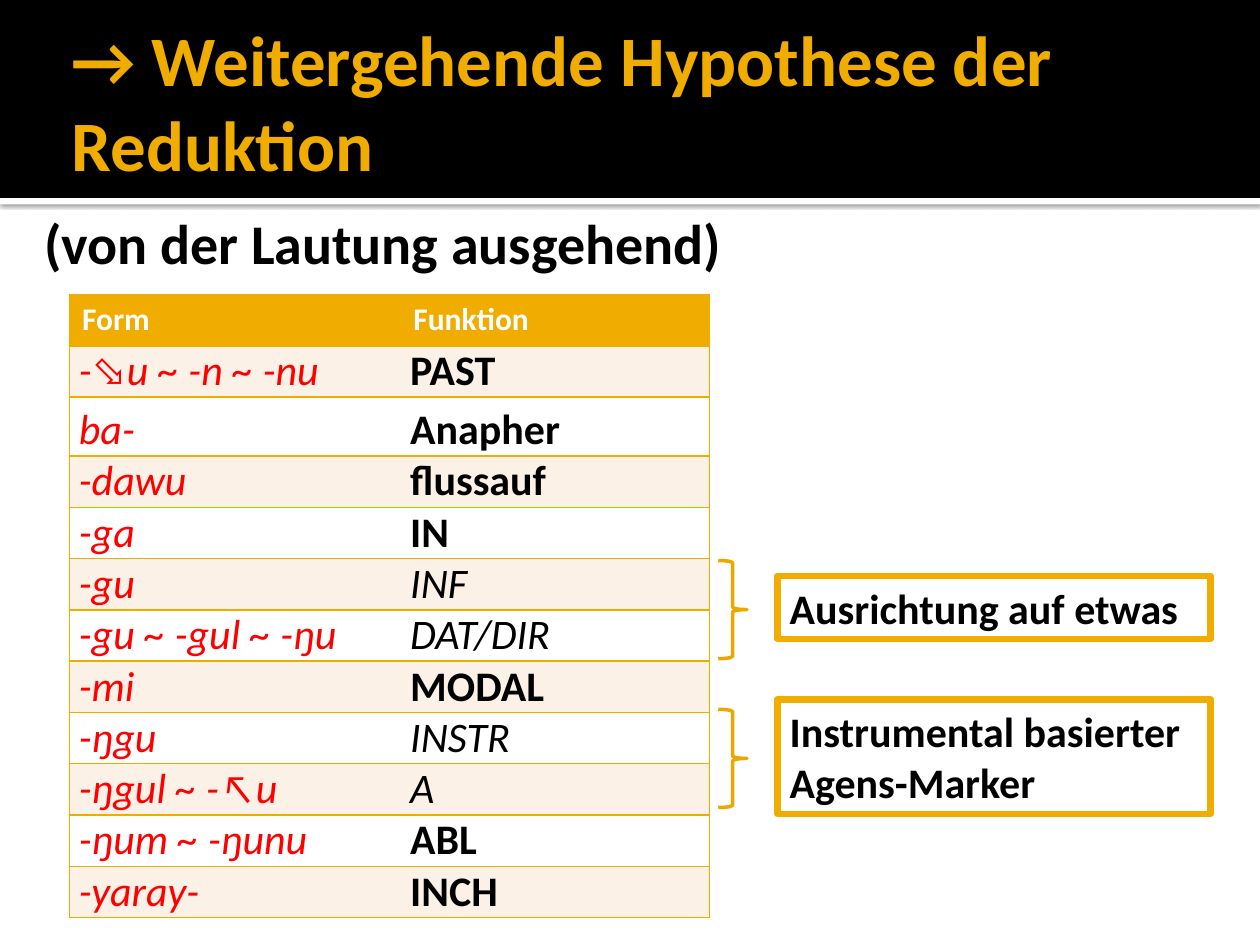
"""Build a slide on reducing suffix forms to shared functions, as a table with bracketed remarks."""
from lxml import etree
from pptx import Presentation
from pptx.dml.color import RGBColor
from pptx.enum.shapes import MSO_SHAPE
from pptx.enum.text import MSO_ANCHOR, MSO_AUTO_SIZE, PP_ALIGN
from pptx.oxml import parse_xml
from pptx.oxml.ns import qn
from pptx.util import Cm, Pt

RECTANGLE, BRACE = MSO_SHAPE.RECTANGLE, MSO_SHAPE.RIGHT_BRACE
MIDDLE, TOP = MSO_ANCHOR.MIDDLE, MSO_ANCHOR.TOP
LEFT, JUSTIFY = PP_ALIGN.LEFT, PP_ALIGN.JUSTIFY
NO_FIT, GROW = MSO_AUTO_SIZE.NONE, MSO_AUTO_SIZE.SHAPE_TO_FIT_TEXT

GOLD = RGBColor(0xF0, 0xAD, 0x00)
BRACE_GOLD = RGBColor(0xEB, 0xA9, 0x00)
BLACK = RGBColor(0, 0, 0)
WHITE = RGBColor(0xFF, 0xFF, 0xFF)
CREAM = RGBColor(0xFC, 0xF1, 0xE7)
RED = RGBColor(0xFF, 0, 0)
FONT = "Calibri"

TITLE = "→ Weitergehende Hypothese der Reduktion"
SUBTITLE = "(von der Lautung ausgehend)"
HEADER = ("Form", "Funktion")
FORMS = [
    ("-⬂u ~ -n ~ -nu", "PAST"),
    ("ba-", "Anapher"),
    ("-dawu", "flussauf"),
    ("-ga", "IN"),
    ("-gu", "INF"),
    ("-gu ~ -gul ~ -ŋu", "DAT/DIR"),
    ("-mi", "MODAL"),
    ("-ŋgu", "INSTR"),
    ("-ŋgul ~ -↖u", "A"),
    ("-ŋum ~ -ŋunu", "ABL"),
    ("-yaray-", "INCH"),
]
GROUPED = {"INF", "DAT/DIR", "INSTR", "A"}
LOOSE_ROW = 2
REMARKS = [
    ("Ausrichtung auf etwas", 11.3, 11.61, 1.27),
    ("Instrumental basierter Agens-Marker", 14.3, 14.1, 2.31),
]
COLUMN_WIDTHS = (6.68, 6.22)
ROW_HEIGHT = 1.02

DRAWING = 'xmlns:a="http://schemas.openxmlformats.org/drawingml/2006/main"'
SHADOW = (
    f'<a:effectLst {DRAWING}><a:outerShdw blurRad="31750" dist="10160" dir="5400000">'
    '<a:srgbClr val="000000"><a:alpha val="60000"/></a:srgbClr></a:outerShdw></a:effectLst>'
)


def place(shape, left, top, width, height):
    shape.left, shape.top = Cm(left), Cm(top)
    shape.width, shape.height = Cm(width), Cm(height)


def set_margins(target, left, top, right, bottom):
    target.margin_left, target.margin_top = Cm(left), Cm(top)
    target.margin_right, target.margin_bottom = Cm(right), Cm(bottom)


def write(frame, text, size, color, bold=True, italic=False, align=LEFT):
    frame.text = text
    para = frame.paragraphs[0]
    para.alignment = align
    font = para.runs[0].font
    font.name, font.size, font.bold, font.italic = FONT, Pt(size), bold, italic
    font.color.rgb = color
    return para


def add_rectangle(page, left, top, width, height, color):
    shape = page.shapes.add_shape(RECTANGLE, Cm(left), Cm(top), Cm(width), Cm(height))
    shape.shadow.inherit = False
    shape.fill.solid()
    shape.fill.fore_color.rgb = color
    shape.line.fill.background()
    return shape


def add_headings(page):
    title, body = page.shapes.title, page.placeholders[1]
    rule = add_rectangle(page, 0, 3.99, 25.4, 0.13, WHITE)
    rule.shadow.inherit = True
    rule.element.spPr.append(parse_xml(SHADOW))
    band = add_rectangle(page, 0, 0, 25.4, 3.99, BLACK)
    for shape in (rule, band):
        title.element.addprevious(shape.element)

    place(title, 1.19, 0.28, 22.86, 3.48)
    place(body, 0.41, 3.96, 22.86, 2.01)
    set_margins(title.text_frame, 0.25, 0.13, 0.13, 0.13)
    set_margins(body.text_frame, 0.15, 0.25, 0.25, 0.13)
    for shape, anchor in ((title, MIDDLE), (body, TOP)):
        shape.text_frame.vertical_anchor = anchor
        shape.text_frame.auto_size = NO_FIT
    write(title.text_frame, TITLE, 40.5, GOLD)
    para = write(body.text_frame, SUBTITLE, 32, BLACK)
    para.space_before = Pt(3)
    properties = para._p.get_or_add_pPr()
    properties.set("marL", str(Cm(1.22)))
    properties.set("indent", str(Cm(-0.89)))
    etree.SubElement(properties, qn("a:buNone"))


def set_borders(cell, inner_side):
    properties = cell._tc.get_or_add_tcPr()
    for side in ("lnL", "lnR", "lnT", "lnB"):
        line = etree.SubElement(properties, qn(f"a:{side}"), w=str(Pt(1)))
        if side == inner_side:
            etree.SubElement(line, qn("a:noFill"))
        else:
            fill = etree.SubElement(line, qn("a:solidFill"))
            etree.SubElement(fill, qn("a:srgbClr"), val=str(GOLD))


def add_form_table(page):
    rows = [HEADER] + FORMS
    table = page.shapes.add_table(
        len(rows), len(HEADER), Cm(1.4), Cm(5.94),
        Cm(sum(COLUMN_WIDTHS)), Cm(ROW_HEIGHT * len(rows)),
    ).table
    for column, width in zip(table.columns, COLUMN_WIDTHS):
        column.width = Cm(width)
    for row_index, row in enumerate(rows):
        table.rows[row_index].height = Cm(ROW_HEIGHT)
        for column_index, text in enumerate(row):
            cell = table.cell(row_index, column_index)
            set_borders(cell, "lnL" if column_index else "lnR")
            cell.fill.solid()
            if row_index == 0:
                cell.fill.fore_color.rgb = GOLD
                write(cell.text_frame, text, 18, WHITE)
                continue
            cell.fill.fore_color.rgb = CREAM if row_index % 2 else WHITE
            set_margins(cell, 0.19, 0, 0.19, 0)
            italic = column_index == 0 or text in GROUPED
            color = BLACK if column_index else RED
            para = write(cell.text_frame, text, 24, color, not italic, italic, JUSTIFY)
            if row_index == LOOSE_ROW:
                para.line_spacing = 1.15


def add_remark(page, text, brace_top, box_top, box_height):
    brace = page.shapes.add_shape(BRACE, Cm(14.48), Cm(brace_top), Cm(0.58), Cm(1.98))
    brace.shadow.inherit = False
    brace.fill.background()
    brace.line.color.rgb = BRACE_GOLD
    brace.line.width = Pt(2)
    box = add_rectangle(page, 15.67, box_top, 8.74, box_height, WHITE)
    box.line.color.rgb = GOLD
    box.line.width = Pt(3.78)
    box.text_frame.word_wrap = True
    box.text_frame.auto_size = GROW
    box.text_frame.vertical_anchor = TOP
    write(box.text_frame, text, 24, BLACK)


def main():
    deck = Presentation()
    deck.slide_width, deck.slide_height = Cm(25.4), Cm(19.05)
    page = deck.slides.add_slide(deck.slide_layouts[1])
    add_headings(page)
    add_form_table(page)
    for remark in REMARKS:
        add_remark(page, *remark)
    deck.save("out.pptx")


if __name__ == "__main__":
    main()
